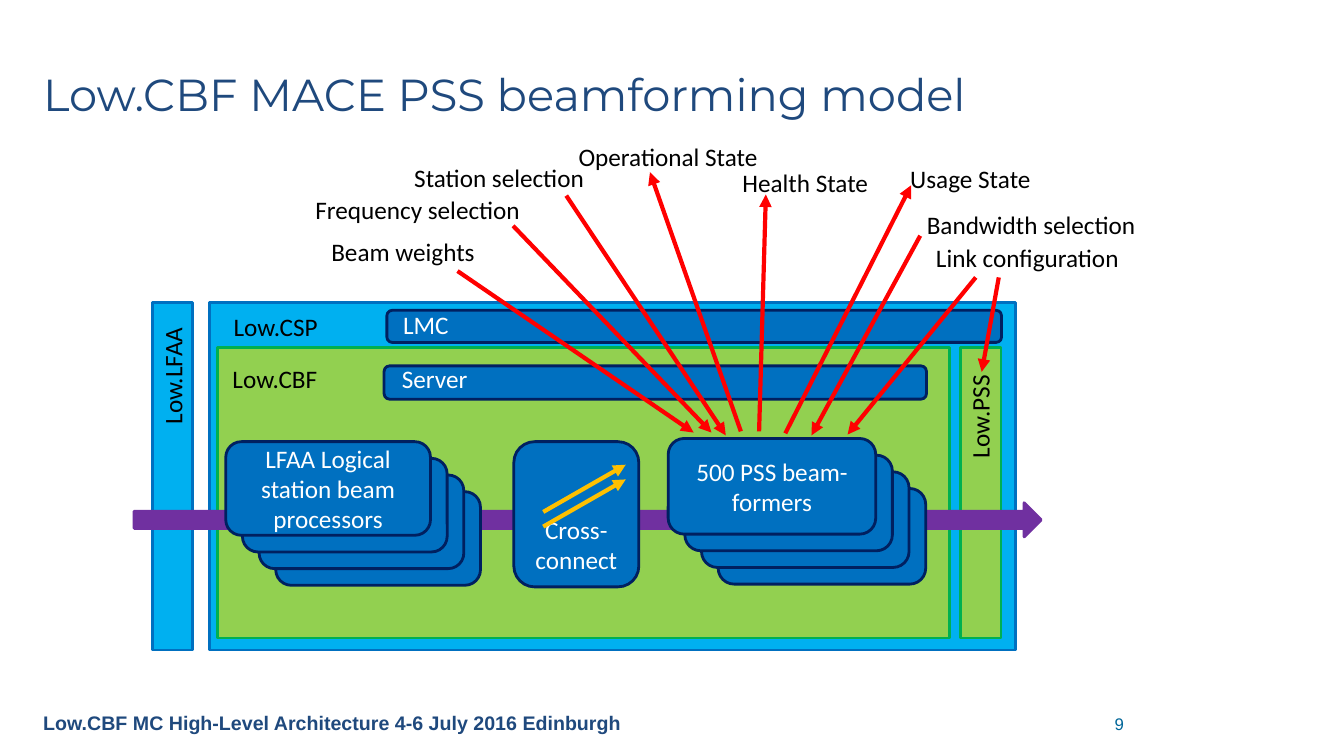
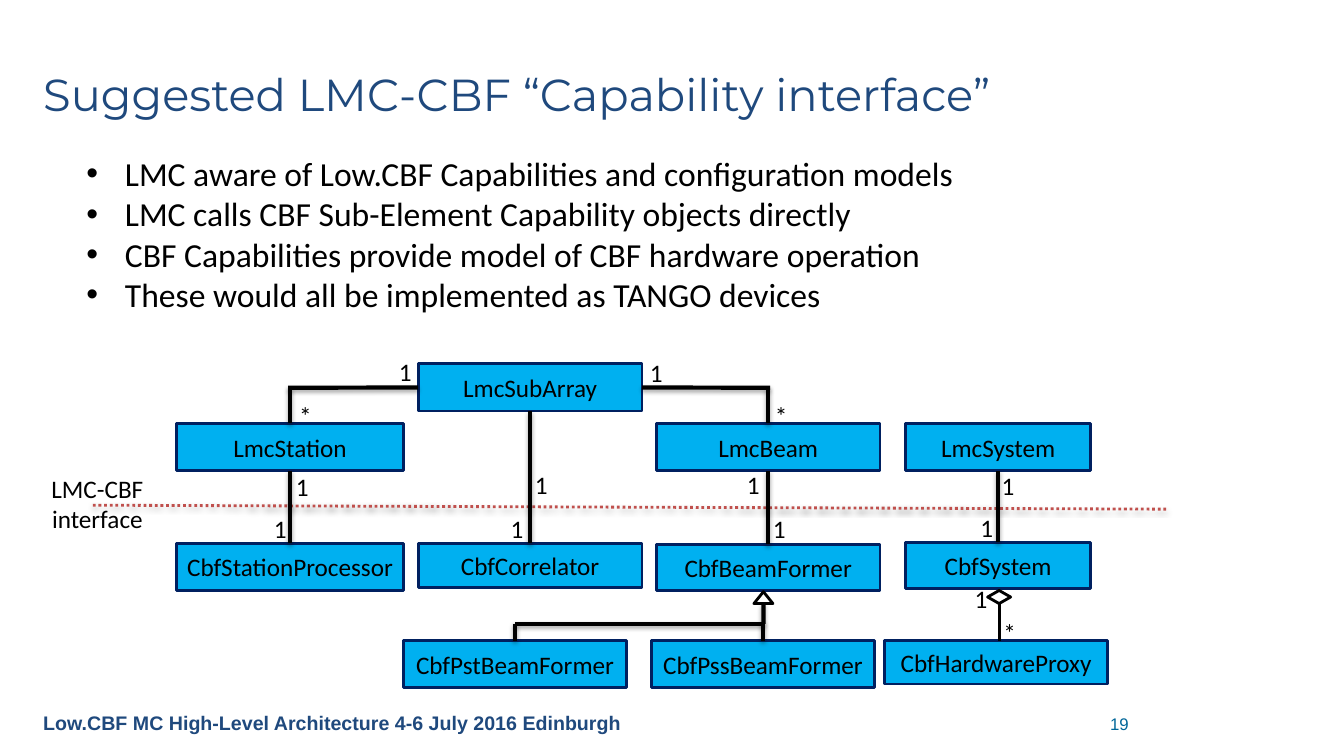
from typing import NamedTuple

from lxml.etree import SubElement
from pptx import Presentation
from pptx.dml.color import RGBColor
from pptx.enum.dml import MSO_LINE
from pptx.enum.shapes import MSO_CONNECTOR, MSO_SHAPE
from pptx.enum.text import MSO_ANCHOR, PP_ALIGN
from pptx.oxml.ns import qn
from pptx.util import Cm, Pt

NAVY, SKY, BLUE, DARK_BLUE = "1F497D", "00B0F0", "0070C0", "002060"
LIME, GREEN, PURPLE, TEAL = "92D050", "00B050", "7030A0", "006699"
RED, AMBER, BRICK = "FF0000", "FFC000", "C0504D"
BLACK, WHITE = "000000", "FFFFFF"
FOOTER = "Low.CBF MC High-Level Architecture 4-6 July 2016 Edinburgh"
TOP, LEFT, BOTTOM, RIGHT = range(4)
LABEL_HEIGHT = 1.02


class Joint(NamedTuple):
    box: object
    site: int

    def point(self):
        across, down = [(0.5, 0), (0, 0.5), (0.5, 1), (1, 0.5)][self.site]
        box = self.box
        return int(box.left + box.width * across), int(box.top + box.height * down)


def rgb(color):
    return RGBColor.from_string(color)


def write(shape, text, size=18, font="Calibri", color=BLACK, bold=False,
          align=PP_ALIGN.LEFT, anchor=MSO_ANCHOR.TOP, wrap=True, bullet_indent=None):
    frame = shape.text_frame
    frame.word_wrap = wrap
    frame.vertical_anchor = anchor
    for index, line in enumerate(text.split("\n")):
        paragraph = frame.add_paragraph() if index else frame.paragraphs[0]
        paragraph.alignment = align
        paragraph.add_run().text = line
        if bullet_indent:
            properties = paragraph._p.get_or_add_pPr()
            properties.set("marL", str(Cm(bullet_indent)))
            properties.set("indent", str(-Cm(bullet_indent)))
            SubElement(properties, qn("a:buFont"), typeface="Arial")
            SubElement(properties, qn("a:buChar"), char="•")
        for run in paragraph.runs:
            run.font.size = Pt(size)
            run.font.name = font
            run.font.bold = bold
            run.font.color.rgb = rgb(color)
    return shape


def add_label(slide, text, left, top, width, height=LABEL_HEIGHT, rotation=0, **style):
    label = slide.shapes.add_textbox(Cm(left), Cm(top), Cm(width), Cm(height))
    label.rotation = rotation
    return write(label, text, **style)


def add_block(slide, kind, left, top, width, height, fill, line):
    block = slide.shapes.add_shape(kind, Cm(left), Cm(top), Cm(width), Cm(height))
    block.shadow.inherit = False
    block.fill.solid()
    block.fill.fore_color.rgb = rgb(fill)
    block.line.color.rgb = rgb(line)
    block.line.width = Pt(2)
    return block


def add_stack(slide, text, left, top, width, height, layers=4, step=0.42):
    for layer in reversed(range(layers)):
        front = add_block(slide, MSO_SHAPE.ROUNDED_RECTANGLE, left + layer * step,
                          top + layer * step, width, height, BLUE, DARK_BLUE)
    write(front, text, color=WHITE, align=PP_ALIGN.CENTER, anchor=MSO_ANCHOR.MIDDLE)


def add_class(slide, name, left, top, width, height):
    box = add_block(slide, MSO_SHAPE.RECTANGLE, left, top, width, height, SKY, DARK_BLUE)
    return write(box, name, align=PP_ALIGN.CENTER, anchor=MSO_ANCHOR.MIDDLE, wrap=False)


def add_line(slide, start, end, color=BLACK, width=3, dash=None, arrow=False, shadow=False):
    ends = [end_.point() if isinstance(end_, Joint) else tuple(map(Cm, end_))
            for end_ in (start, end)]
    line = slide.shapes.add_connector(MSO_CONNECTOR.STRAIGHT, *ends[0], *ends[1])
    if isinstance(start, Joint):
        line.begin_connect(*start)
    if isinstance(end, Joint):
        line.end_connect(*end)
    line.line.color.rgb = rgb(color)
    line.line.width = Pt(width)
    if dash:
        line.line.dash_style = dash
    if arrow:
        SubElement(line.line._get_or_add_ln(), qn("a:tailEnd"), type="triangle")
    effects = SubElement(line._element.spPr, qn("a:effectLst"))
    if shadow:
        outer = SubElement(effects, qn("a:outerShdw"), blurRad=str(Pt(3.1)),
                           dist=str(Pt(1.8)), dir="5400000", rotWithShape="0")
        shade = SubElement(outer, qn("a:srgbClr"), val=BLACK)
        SubElement(shade, qn("a:alpha"), val="35000")


def start_slide(deck, title, number):
    slide = deck.slides.add_slide(deck.slide_layouts[6])
    add_label(slide, FOOTER, 0.84, 17.78, 16.08, 0.86, size=14, font="Arial",
              color=NAVY, bold=True)
    add_label(slide, number, 26.52, 17.86, 3.38, 0.76, size=12, font="Arial",
              color=TEAL, align=PP_ALIGN.CENTER)
    add_label(slide, title, 0.84, 0.76, 32.18, 3.18, size=32, font="Montserrat",
              color=NAVY, anchor=MSO_ANCHOR.MIDDLE)
    return slide


def build_beamforming(deck):
    slide = start_slide(deck, "Low.CBF MACE PSS beamforming model", "9")

    for kind, left, top, width, height, fill, line in [
        (MSO_SHAPE.RECTANGLE, 5.28, 7.62, 20.32, 8.76, SKY, BLUE),
        (MSO_SHAPE.RECTANGLE, 24.21, 8.76, 1.02, 7.32, LIME, GREEN),
        (MSO_SHAPE.RECTANGLE, 3.84, 7.62, 1.02, 8.76, SKY, BLUE),
        (MSO_SHAPE.RECTANGLE, 5.49, 8.76, 18.44, 7.32, LIME, GREEN),
        (MSO_SHAPE.RIGHT_ARROW, 3.38, 12.67, 22.86, 0.86, PURPLE, PURPLE),
        (MSO_SHAPE.ROUNDED_RECTANGLE, 9.75, 7.82, 15.49, 0.81, BLUE, DARK_BLUE),
        (MSO_SHAPE.ROUNDED_RECTANGLE, 9.68, 9.22, 13.67, 0.84, BLUE, DARK_BLUE),
    ]:
        add_block(slide, kind, left, top, width, height, fill, line)

    for name, left, top, width, rotation, color in [
        ("Low.CSP", 5.64, 7.72, 2.64, 0, BLACK),
        ("Low.CBF", 5.61, 9.02, 2.67, 0, BLACK),
        ("LMC", 9.91, 7.67, 1.68, 0, WHITE),
        ("Server", 9.88, 9.04, 2.18, 0, WHITE),
        ("Low.LFAA", 2.84, 8.92, 3.02, 270, BLACK),
        ("Low.PSS", 23.32, 9.91, 2.74, 270, BLACK),
    ]:
        add_label(slide, name, left, top, width, rotation=rotation, color=color,
                  wrap=bool(rotation))

    add_stack(slide, "LFAA Logical station beam processors", 5.69, 11.13, 5.16, 2.36)
    cross_connect = add_block(slide, MSO_SHAPE.ROUNDED_RECTANGLE, 12.95, 11.13, 3.15, 3.66,
                              BLUE, DARK_BLUE)
    write(cross_connect, "Cross-connect", color=WHITE, align=PP_ALIGN.CENTER,
          anchor=MSO_ANCHOR.BOTTOM)
    cross_connect.text_frame.margin_bottom = Cm(0.15)
    for drop in (0, 0.37):
        add_line(slide, (13.69, 12.9 + drop), (15.77, 11.71 + drop), AMBER, arrow=True)
    add_stack(slide, "500 PSS beam-formers", 16.84, 11.05, 5.23, 2.41)

    start, middle = PP_ALIGN.LEFT, PP_ALIGN.CENTER
    for name, left, top, width, align, arrows in [
        ("Beam weights", 8.1, 5.84, 4.17, start, [((11.53, 6.83), (17.48, 10.9))]),
        ("Frequency selection", 7.7, 4.78, 5.79, start, [((12.93, 5.69), (17.93, 10.9))]),
        ("Station selection", 10.19, 3.96, 4.85, start, [((14.27, 4.93), (18.29, 10.97))]),
        ("Operational State", 13.84, 3.43, 5.99, middle, [((18.67, 10.87), (16.38, 4.34))]),
        ("Health State", 17.3, 4.09, 5.99, middle, [((19.13, 10.87), (19.3, 4.9))]),
        ("Usage State", 21.46, 3.99, 5.99, middle, [((19.79, 10.92), (22.96, 4.67))]),
        ("Bandwidth selection", 22.53, 5.16, 6.91, middle, [((23.19, 5.94), (20.45, 10.97))]),
        ("Link configuration", 22.83, 5.97, 6.12, middle,
         [((24.59, 6.99), (21.36, 10.95)), ((25.17, 6.99), (24.74, 9.37))]),
    ]:
        add_label(slide, name, left, top, width, align=align, wrap=align == middle)
        for tail, head in arrows:
            add_line(slide, tail, head, RED, arrow=True)


def build_capability(deck):
    slide = start_slide(deck, "Suggested LMC-CBF “Capability interface”", "19")
    add_label(slide, "LMC aware of Low.CBF Capabilities and configuration models\n"
                     "LMC calls CBF Sub-Element Capability objects directly\n"
                     "CBF Capabilities provide model of CBF hardware operation\n"
                     "These would all be implemented as TANGO devices",
              1.93, 3.73, 29.21, 4.37, size=24, bullet_indent=0.97)

    classes = {name: add_class(slide, name, *place) for name, *place in [
        ("LmcSubArray", 10.54, 9.17, 5.64, 1.19),
        ("LmcStation", 4.45, 10.67, 5.72, 1.19),
        ("LmcBeam", 16.54, 10.67, 5.64, 1.19),
        ("LmcSystem", 22.83, 10.67, 4.65, 1.19),
        ("CbfStationProcessor", 4.45, 13.69, 5.72, 1.19),
        ("CbfCorrelator", 10.54, 13.69, 5.64, 1.12),
        ("CbfBeamFormer", 16.54, 13.72, 5.64, 1.17),
        ("CbfSystem", 22.83, 13.67, 4.65, 1.17),
        ("CbfPstBeamFormer", 10.16, 16.15, 5.64, 1.17),
        ("CbfPssBeamFormer", 16.41, 16.15, 5.64, 1.17),
        ("CbfHardwareProxy", 22.3, 16.15, 5.61, 1.09),
    ]}

    def side(name, site):
        return Joint(classes[name], site)

    add_line(slide, (2.34, 12.73), (29.41, 12.83), BRICK, width=2,
             dash=MSO_LINE.ROUND_DOT, shadow=True)
    add_label(slide, "LMC-CBF\ninterface", 0.97, 11.79, 2.97, 1.8,
              align=PP_ALIGN.CENTER, wrap=False)

    generalization = add_block(slide, MSO_SHAPE.ISOSCELES_TRIANGLE, 19, 14.91, 0.48, 0.3,
                               WHITE, BLACK)
    aggregation = add_block(slide, MSO_SHAPE.DIAMOND, 24.89, 14.88, 0.58, 0.33, WHITE, BLACK)
    bus = 15.72
    for start, end in [
        (side("LmcSubArray", BOTTOM), side("CbfCorrelator", TOP)),
        (side("LmcStation", BOTTOM), side("CbfStationProcessor", TOP)),
        (side("LmcBeam", BOTTOM), side("CbfBeamFormer", TOP)),
        (side("LmcSystem", BOTTOM), side("CbfSystem", TOP)),
        (side("LmcSubArray", LEFT), (7.26, 9.77)),
        ((7.31, 9.77), side("LmcStation", TOP)),
        (side("LmcSubArray", RIGHT), (19.41, 9.77)),
        ((19.36, 9.77), side("LmcBeam", TOP)),
        (Joint(generalization, BOTTOM), (19.24, bus)),
        ((12.98, bus), (19.28, bus)),
        ((12.98, bus), side("CbfPstBeamFormer", TOP)),
        ((19.23, bus), side("CbfPssBeamFormer", TOP)),
    ]:
        add_line(slide, start, end, shadow=True)
    add_line(slide, Joint(aggregation, BOTTOM), (25.18, 16.15), width=2)

    multiplicities = {
        "1": [(9.8, 8.86), (16.13, 8.89), (7.21, 11.76), (13.23, 11.71), (18.57, 11.71),
              (24.99, 11.73), (6.65, 12.8), (12.62, 12.8), (19.23, 12.8), (24.46, 12.78),
              (24.31, 14.58)],
        "*": [(7.29, 9.96), (19.28, 9.96), (25.04, 15.44)],
    }
    for mark, places in multiplicities.items():
        for left, top in places:
            add_label(slide, mark, left, top, 0.84, wrap=False)


def main():
    deck = Presentation()
    deck.slide_width, deck.slide_height = Cm(33.87), Cm(19.05)
    build_beamforming(deck)
    build_capability(deck)
    deck.save("out.pptx")


if __name__ == "__main__":
    main()
